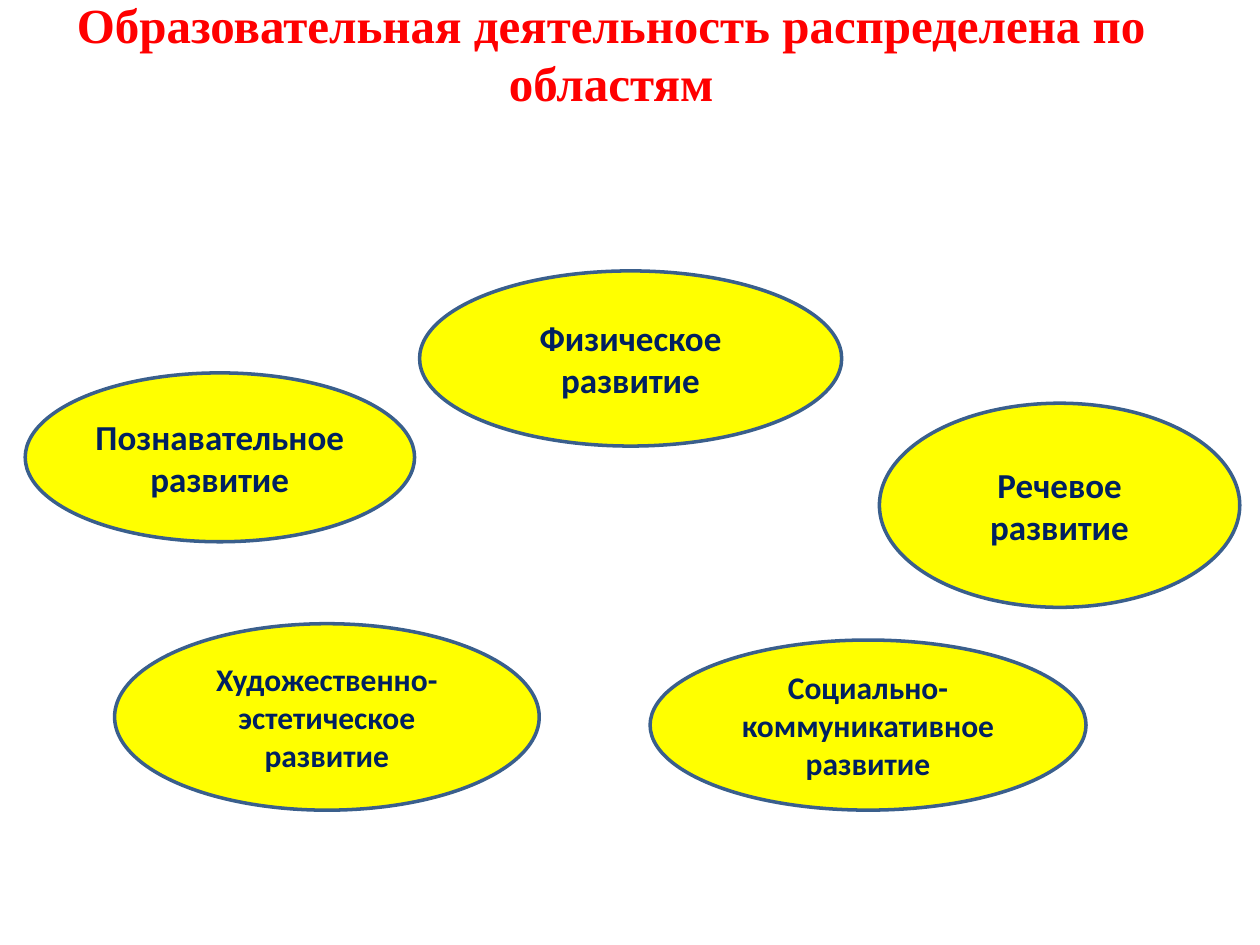
from pptx import Presentation
from pptx import util as u
from pptx.dml.color import RGBColor
from pptx.enum import shapes, text

RED = RGBColor(0xFF, 0x00, 0x00)
YELLOW = RGBColor(0xFF, 0xFF, 0x00)
NAVY = RGBColor(0x00, 0x20, 0x60)
STEEL = RGBColor(0x3A, 0x5F, 0x8C)


def write(box, words, *, size, font, color):
    """Put one bold, centred paragraph in the middle of a box."""
    frame = box.text_frame
    frame.word_wrap = True
    frame.vertical_anchor = text.MSO_ANCHOR.MIDDLE
    para = frame.paragraphs[0]
    para.alignment = text.PP_ALIGN.CENTER
    span = para.add_run()
    span.text = words
    span.font.size = u.Pt(size)
    span.font.name = font
    span.font.bold = True
    span.font.color.rgb = color


class AreasPage:
    title_font = "Times New Roman"
    body_font = "Calibri"

    def __init__(self, page):
        self.page = page

    def title(self, words, *place):
        box = self.page.shapes.add_textbox(*map(u.Inches, place))
        write(box, words, size=28, font=self.title_font, color=RED)

    def area(self, words, size, *place):
        oval = self.page.shapes.add_shape(
            shapes.MSO_SHAPE.OVAL, *map(u.Inches, place))
        oval.shadow.inherit = False
        oval.fill.solid()
        oval.fill.fore_color.rgb = YELLOW
        oval.line.color.rgb = STEEL
        oval.line.width = u.Pt(2)
        write(oval, words, size=size, font=self.body_font, color=NAVY)


def main():
    deck = Presentation()
    deck.slide_width, deck.slide_height = u.Inches(10), u.Inches(7.5)
    page = AreasPage(deck.slides.add_slide(deck.slide_layouts[6]))

    # Heading
    page.title("Образовательная деятельность распределена по областям",
               0.2, 0, 9.3, 0.84)

    # Areas of development: name, text size, left, top, width, height
    areas = [
        ("Физическое развитие", 20, 3.33, 2.15, 3.35, 1.39),
        ("Познавательное развитие", 20, 0.2, 2.96, 3.09, 1.34),
        ("Речевое развитие", 20, 6.98, 3.2, 2.86, 1.62),
        ("Художественно-эстетическое развитие", 18, 0.91, 4.95, 3.37, 1.48),
        ("Социально-коммуникативное развитие", 18, 5.16, 5.08, 3.46, 1.35),
    ]
    for area in areas:
        page.area(*area)

    deck.save("out.pptx")


if __name__ == "__main__":
    main()
